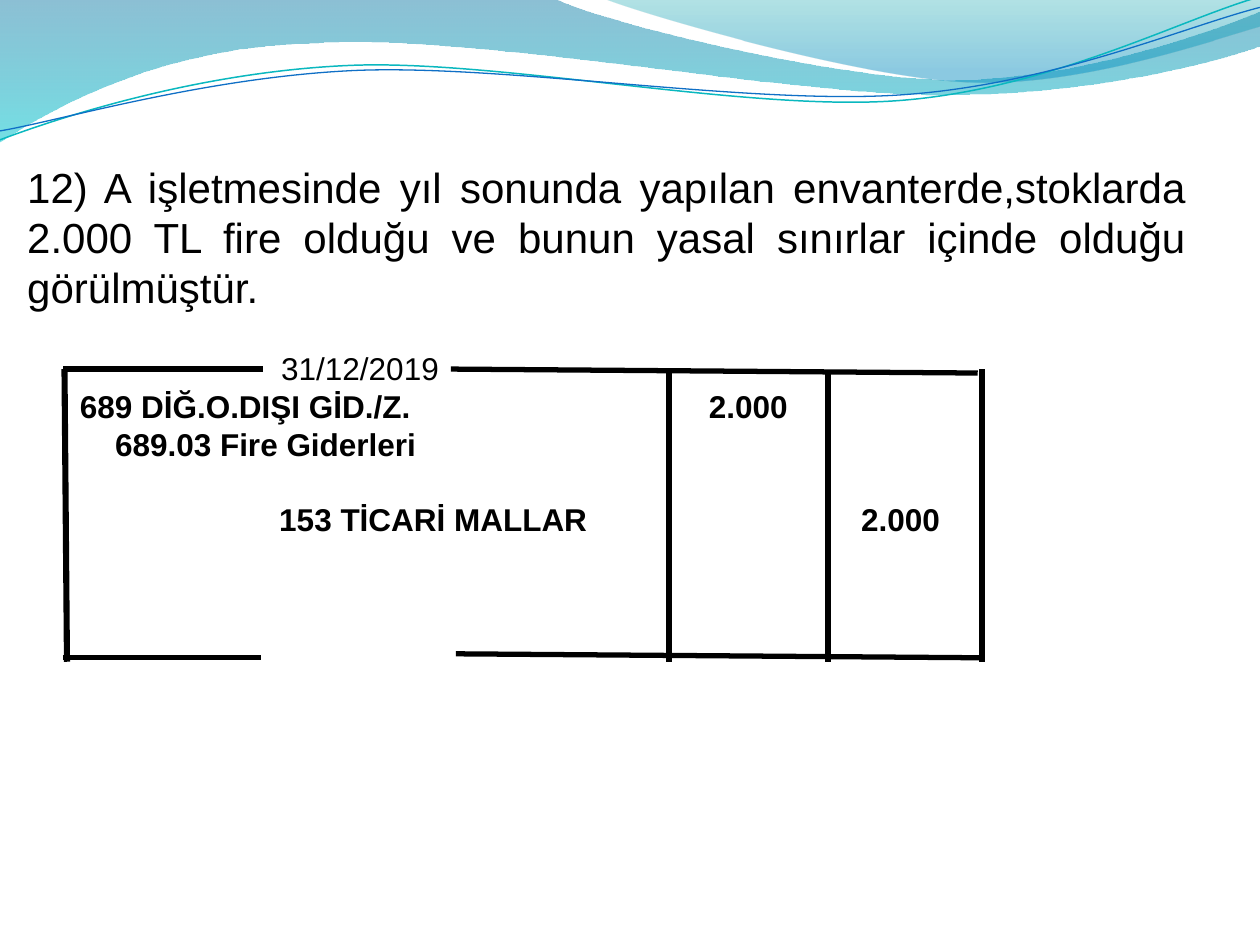
"""Build a slide with an inventory shrinkage question and its journal entry."""
from lxml.etree import SubElement
from pptx import Presentation
from pptx.dml.color import RGBColor
from pptx.enum.shapes import MSO_CONNECTOR as Connector
from pptx.enum.text import PP_ALIGN as Align
from pptx.oxml.ns import qn
from pptx.util import Cm, Pt

COLORS = {
    "text": "000000",
    "rule": "000000",
    "deep_blue": "0074A1",
    "aqua": "00C6CF",
    "teal": "00A1A9",
    "sky": "008BBF",
    "teal_line": "0AB8BF",
    "blue_line": "0F6FC6",
}


def add_text(frame, text, size=18, bold=False, tabs=(), before=0, spacing=21.5):
    paragraph = frame.paragraphs[0] if not frame.text else frame.add_paragraph()
    paragraph.alignment = Align.JUSTIFY
    paragraph.line_spacing = Pt(spacing)
    paragraph.space_before = Pt(before)
    if tabs:
        tab_list = SubElement(paragraph._p.get_or_add_pPr(), qn("a:tabLst"))
        for position in tabs:
            SubElement(tab_list, qn("a:tab"), pos=str(Cm(position)), algn="l")
    run = paragraph.add_run()
    run.text = text
    run.font.name = "Arial"
    run.font.size = Pt(size)
    run.font.bold = bold
    run.font.color.rgb = RGBColor.from_string(COLORS["text"])


def add_outline(slide, start, segments, close):
    builder = slide.shapes.build_freeform(*map(Cm, start))
    for segment in segments:
        builder.add_line_segments([(Cm(x), Cm(y)) for x, y in segment], close=False)
    if close:
        builder.add_line_segments([], close=True)
    shape = builder.convert_to_shape()
    shape.shadow.inherit = False
    line_elements = iter(list(shape._element.iter(qn("a:lnTo"))))
    for segment in segments:
        elements = [next(line_elements) for point in segment]
        if len(elements) == 3:
            curve = elements[0]
            curve.tag = qn("a:cubicBezTo")
            for element in elements[1:]:
                curve.append(element[0])
                element.getparent().remove(element)
    return shape


presentation = Presentation()
presentation.slide_width = Cm(25.4)
presentation.slide_height = Cm(19.05)
slide = presentation.slides.add_slide(presentation.slide_layouts[6])

bands = [
    ((0, 0), [
        ((11.18, -0.03),),
        ((12.09, 0.43), (16.87, 1.6), (19.25, 1.6)),
        ((21.67, 1.6), (24.33, 0.66), (25.4, 0.23)),
        ((25.43, 0.91),),
        ((24.97, 1.12), (22.1, 1.93), (18.95, 1.91)),
        ((15.8, 1.91), (9.7, 0.71), (6.53, 0.86)),
        ((3.28, 0.91), (1.17, 2.11), (-0.03, 2.87)),
    ], [("deep_blue", 0, 45), ("aqua", 1, 55)]),
    ((12.17, -0.03), [
        ((12.93, 0.28), (17.32, 1.57), (19.53, 1.65)),
        ((21.74, 1.75), (24.41, 0.81), (25.4, 0.53)),
        ((25.4, 0),),
    ], [("teal", 0, 30), ("sky", 0.8, 45)]),
]
for start, segments, stops in bands:
    band = add_outline(slide, start, segments, close=True)
    band.line.fill.background()
    band.fill.gradient()
    band.fill.gradient_angle = 270
    for gradient_stop, (color, position, opacity) in zip(band.fill.gradient_stops, stops):
        gradient_stop.position = position
        gradient_stop.color.rgb = RGBColor.from_string(COLORS[color])
    for element, (color, position, opacity) in zip(band._element.iter(qn("a:srgbClr")), stops):
        SubElement(element, qn("a:alpha")).set("val", str(opacity * 1000))

waves = [
    ((0, 2.82), [
        ((1.22, 2.36), (4.01, 1.45), (7.04, 1.32)),
        ((10.03, 1.19), (15.06, 2.26), (18.11, 2.03)),
        ((21.16, 1.8), (23.83, 0.38), (25.35, -0.05)),
    ], "teal_line", 0.85),
    ((0, 2.64), [
        ((1.19, 2.44), (4.17, 1.55), (7.19, 1.42)),
        ((10.24, 1.3), (15.16, 2.13), (18.21, 1.91)),
        ((21.23, 1.7), (23.9, 0.53), (25.4, 0.15)),
    ], "blue_line", 0.75),
]
for start, segments, color, width in waves:
    wave = add_outline(slide, start, segments, close=False)
    wave.fill.background()
    wave.line.color.rgb = RGBColor.from_string(COLORS[color])
    wave.line.width = Pt(width)

question = "12) A işletmesinde yıl sonunda yapılan envanterde,stoklarda 2.000 TL fire olduğu ve bunun yasal sınırlar içinde olduğu görülmüştür."
entry_lines = [
    (question, {"size": 24, "spacing": 28.6}),
    ("\t31/12/2019", {"tabs": [5.12], "before": 21.5}),
    ("\t689 DİĞ.O.DIŞI GİD./Z.\t2.000", {"tabs": [1.06, 13.74], "bold": True}),
    ("\t689.03 Fire Giderleri", {"tabs": [1.77], "bold": True}),
    ("\t153 TİCARİ MALLAR\t2.000", {"tabs": [5.08, 16.81], "bold": True, "before": 21.5}),
]
frame = slide.shapes.add_textbox(Cm(0.3), Cm(3.14), Cm(23.85), Cm(8.71)).text_frame
frame.word_wrap = True
for text, text_format in entry_lines:
    add_text(frame, text, **text_format)

ledger_rules = [
    (1.27, 7.44, 5.31, 7.44, 3),
    (9.09, 7.44, 19.71, 7.52, 3),
    (13.49, 7.44, 13.49, 13.34, 3.5),
    (16.69, 7.47, 16.69, 13.34, 3.5),
    (19.79, 7.44, 19.79, 13.34, 3.5),
    (1.3, 7.44, 1.35, 13.34, 3.5),
    (1.27, 13.26, 5.26, 13.26, 3),
    (9.19, 13.18, 19.79, 13.26, 3),
]
for *ends, width in ledger_rules:
    rule = slide.shapes.add_connector(Connector.STRAIGHT, *map(Cm, ends))
    rule.line.color.rgb = RGBColor.from_string(COLORS["rule"])
    rule.line.width = Pt(width)
    SubElement(rule._element.spPr, qn("a:effectLst"))

presentation.save("out.pptx")
